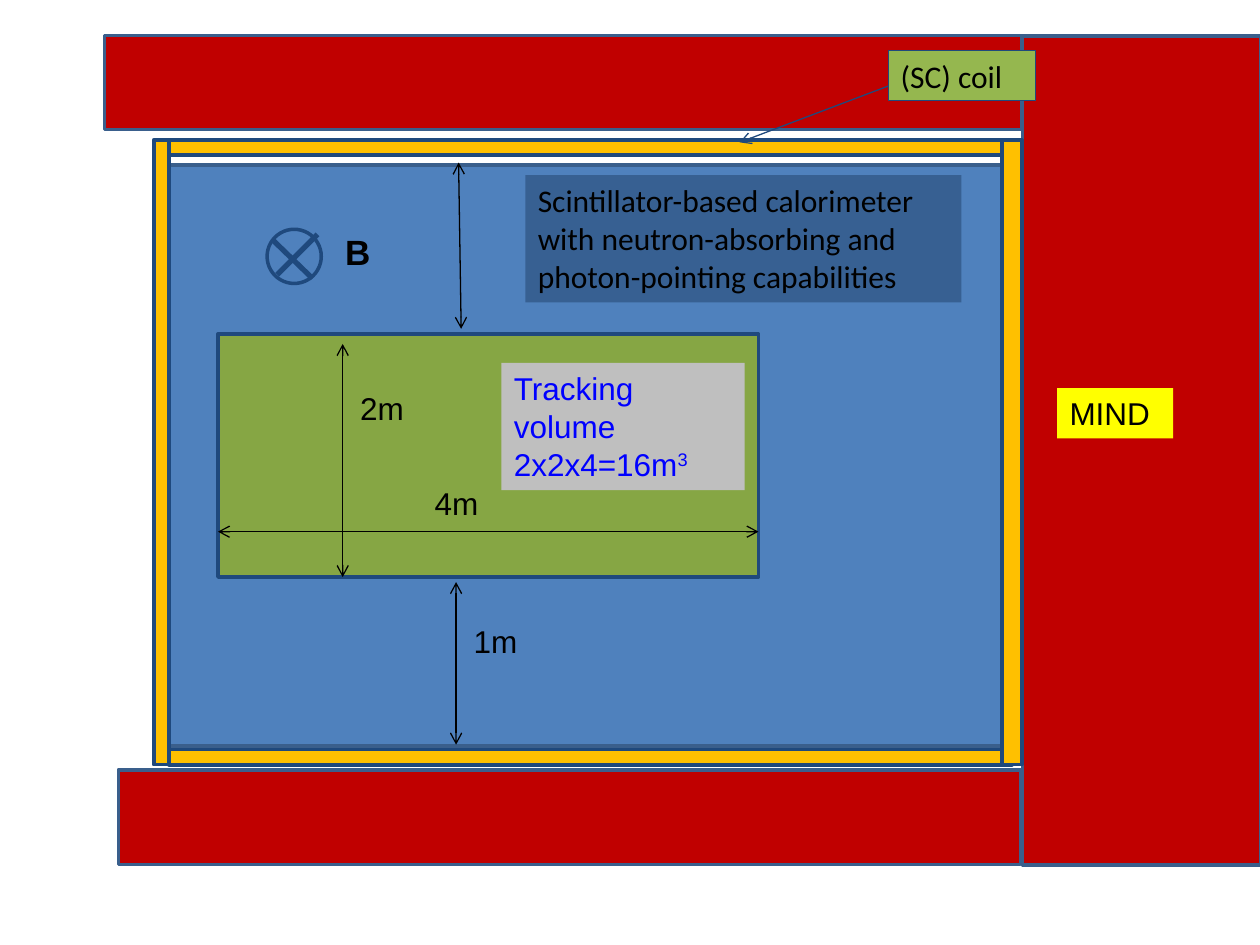
from dataclasses import dataclass

from lxml import etree
from pptx import Presentation
from pptx.dml.color import RGBColor
from pptx.enum.shapes import MSO_CONNECTOR as Connector
from pptx.enum.shapes import MSO_SHAPE as Shape
from pptx.enum.text import MSO_AUTO_SIZE as AutoSize
from pptx.oxml.ns import qn
from pptx.util import Inches, Pt

COLORS = {
    "calorimeter": "4F81BD",
    "calorimeter label": "376092",
    "tracker": "86A644",
    "tracker label": "BFBFBF",
    "coil": "FFC000",
    "coil label": "95B74F",
    "iron": "C00000",
    "iron label": "FFFF00",
    "edge": "3A5F8C",
    "navy": "1F497D",
    "blue": "0000FF",
    "black": "000000",
}


def rgb(name):
    return RGBColor.from_string(COLORS[name])


@dataclass
class Diagram:
    """Holds the current slide and its text style."""
    slide: object
    font: str = "Arial"
    size: float = 18
    outline: float = 2

    def block(self, left, top, width, height, fill, line="navy",
              kind=Shape.RECTANGLE, rotation=0):
        shape = self.slide.shapes.add_shape(
            kind, Inches(left), Inches(top), Inches(width), Inches(height))
        shape.rotation = rotation
        shape.shadow.inherit = False
        shape.fill.solid()
        shape.fill.fore_color.rgb = rgb(fill)
        shape.line.color.rgb = rgb(line)
        shape.line.width = Pt(self.outline)

    def label(self, left, top, width, height, lines, fill=None, line=None,
              color="black", font=None, size=None, bold=False, wrap=False,
              superscript=None):
        box = self.slide.shapes.add_textbox(
            Inches(left), Inches(top), Inches(width), Inches(height))
        if fill:
            box.fill.solid()
            box.fill.fore_color.rgb = rgb(fill)
        if line:
            box.line.color.rgb = rgb(line)
            box.line.width = Pt(0.75)
        frame = box.text_frame
        frame.word_wrap = wrap
        frame.auto_size = AutoSize.SHAPE_TO_FIT_TEXT
        for index, text in enumerate(lines):
            para = frame.add_paragraph() if index else frame.paragraphs[0]
            para.add_run().text = text
            para.font.name = font or self.font
            para.font.size = Pt(size or self.size)
            para.font.bold = bold
            para.font.color.rgb = rgb(color)
        if superscript:
            span = para.add_run()
            span.text = superscript
            span._r.get_or_add_rPr().set("baseline", "30000")

    def line(self, start, end, color="black", width=0.75, arrows=()):
        connector = self.slide.shapes.add_connector(
            Connector.STRAIGHT, *map(Inches, start + end))
        connector.line.color.rgb = rgb(color)
        connector.line.width = Pt(width)
        properties = connector._element.spPr
        stroke = properties.find(qn("a:ln"))
        for arrow in arrows:
            etree.SubElement(stroke, qn(f"a:{arrow}"), type="arrow")
        etree.SubElement(properties, qn("a:effectLst"))

    def dimension(self, start, end):
        self.line(start, end, arrows=("headEnd", "tailEnd"))


def main():
    deck = Presentation()
    deck.slide_width, deck.slide_height = Inches(10), Inches(7.5)
    diagram = Diagram(deck.slides.add_slide(deck.slide_layouts[6]))

    # Calorimeter and its thickness
    diagram.block(1.26, 1.31, 6.73, 4.61, "calorimeter", "edge")
    diagram.dimension((3.64, 1.29), (3.66, 2.61))
    diagram.dimension((3.62, 4.62), (3.62, 5.91))
    diagram.label(3.66, 4.89, 0.55, 0.4, ["1m"])

    # Tracking volume
    diagram.block(2.91, 1.47, 1.93, 4.29, "tracker", rotation=90)

    # Horizontal coil sections
    for top in (1.11, 5.95):
        diagram.block(1.34, top, 6.69, 0.12, "coil")

    # Iron above, below and to the right
    diagram.block(0.83, 0.28, 7.28, 0.75, "iron", "edge")
    diagram.block(0.94, 6.11, 7.16, 0.75, "iron", "edge")
    diagram.block(5.77, 2.63, 6.58, 1.89, "iron", "edge", rotation=90)

    # Coil callout
    diagram.line((7.48, 0.52), (5.87, 1.13), "navy", arrows=("tailEnd",))
    diagram.label(7.05, 0.4, 1.17, 0.4, ["(SC) coil"], "coil label", "navy",
                  font="Calibri")

    diagram.label(3.98, 2.88, 1.93, 1.01, ["Tracking", "volume", "2x2x4=16m"],
                  "tracker label", color="blue", wrap=True, superscript="3")

    # Magnetic field pointing into the page
    diagram.block(2.12, 1.82, 0.43, 0.43, "calorimeter", kind=Shape.OVAL)
    diagram.line((2.52, 1.86), (2.2, 2.18), "navy", 3)
    diagram.line((2.16, 1.9), (2.48, 2.21), "navy", 3)
    diagram.label(2.64, 1.78, 0.4, 0.44, ["B"], size=20, bold=True)

    diagram.label(8.39, 3.08, 0.92, 0.4, ["MIND"], "iron label")

    # Vertical coil sections
    diagram.block(5.55, 3.51, 4.96, 0.16, "coil", rotation=90)
    diagram.block(-1.2, 3.53, 4.96, 0.12, "coil", rotation=90)

    # Tracker dimensions
    diagram.label(2.76, 3.04, 0.55, 0.4, ["2m"])
    diagram.dimension((2.72, 2.73), (2.72, 4.58))
    diagram.dimension((6.02, 4.22), (1.73, 4.22))
    diagram.label(3.35, 3.79, 0.55, 0.4, ["4m"])

    diagram.label(4.17, 1.39, 3.46, 1.01,
                  ["Scintillator-based calorimeter",
                   "with neutron-absorbing and",
                   "photon-pointing capabilities"],
                  "calorimeter label", font="Calibri")

    deck.save("out.pptx")


if __name__ == "__main__":
    main()
